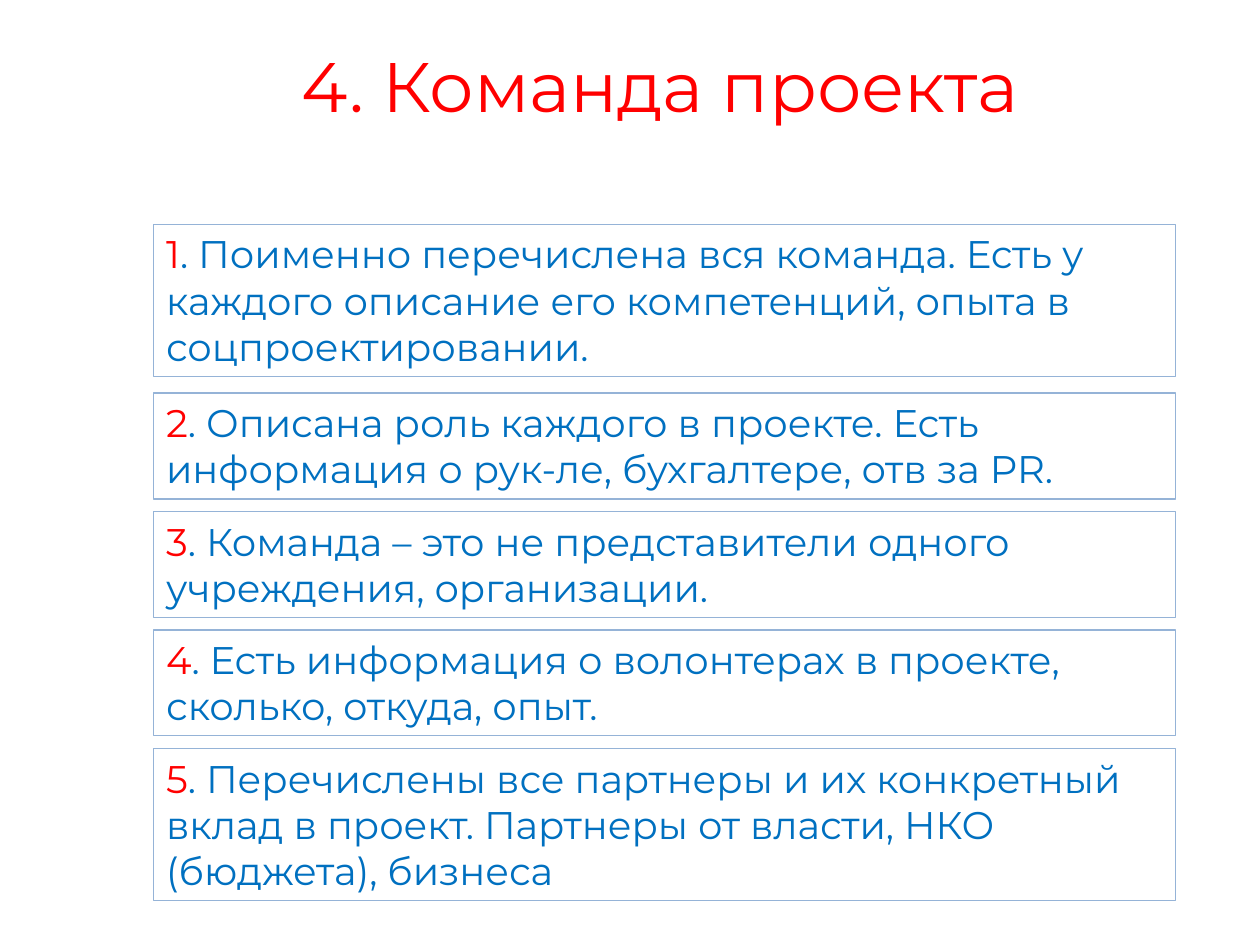
from pptx import Presentation, util as u
from pptx.dml.color import RGBColor
from pptx.enum import shapes, text

COLORS = {"accent": "FF0000", "body": "0070C0", "border": "95B3D7"}
COLUMNS, ROWS = 100, 75

LEFT, WIDTH = 12.2, 81.1
LINE_HEIGHT, PADDING = 3.7, 1
FIRST_TOP, FIRST_GAP, GAP = 17.8, 1.3, 1

# Each criterion with the number of lines it takes
CRITERIA = [
    ("Поименно перечислена вся команда. Есть у каждого описание его "
     "компетенций, опыта в соцпроектировании.", 3),
    ("Описана роль каждого в проекте. Есть информация о рук-ле, "
     "бухгалтере, отв за PR.", 2),
    ("Команда – это не представители одного учреждения, организации.", 2),
    ("Есть информация о волонтерах в проекте, сколько, откуда, опыт.", 2),
    ("Перечислены все партнеры и их конкретный вклад в проект. Партнеры "
     "от власти, НКО (бюджета), бизнеса", 3),
]


def add_span(para, wording, *, size, color, font="Montserrat"):
    span = para.add_run()
    span.text = wording
    span.font.name = font
    span.font.size = u.Pt(size)
    span.font.color.rgb = RGBColor.from_string(COLORS[color])


class Page:
    """Holds the slide, its grid and the text style."""

    def __init__(self, deck):
        self.slide = deck.slides.add_slide(deck.slide_layouts[5])
        self.column = deck.slide_width / COLUMNS
        self.row = deck.slide_height / ROWS

    def place(self, left, top, width, height):
        return (int(left * self.column), int(top * self.row),
                int(width * self.column), int(height * self.row))

    def first_para(self, box, align):
        frame = box.text_frame
        frame.word_wrap = True
        frame.auto_size = text.MSO_AUTO_SIZE.SHAPE_TO_FIT_TEXT
        frame.vertical_anchor = text.MSO_ANCHOR.TOP
        para = frame.paragraphs[0]
        para.alignment = align
        return para

    def title(self, wording, area):
        box = self.slide.shapes.title
        box.left, box.top, box.width, box.height = self.place(*area)
        para = self.first_para(box, text.PP_ALIGN.CENTER)
        add_span(para, wording, size=40, color="accent")

    def criterion(self, number, wording, area):
        box = self.slide.shapes.add_shape(
            shapes.MSO_SHAPE.RECTANGLE, *self.place(*area))
        box.shadow.inherit = False
        box.fill.background()
        box.line.color.rgb = RGBColor.from_string(COLORS["border"])
        box.line.width = u.Pt(0.75)
        para = self.first_para(box, text.PP_ALIGN.LEFT)
        add_span(para, str(number), size=22, color="accent")
        add_span(para, f". {wording}", size=22, color="body")


def main():
    deck = Presentation()
    deck.slide_width, deck.slide_height = u.Inches(10), u.Inches(7.5)
    page = Page(deck)
    page.title("4. Команда проекта", (7.5, 2.9, 89.8, 7.7))

    top = FIRST_TOP
    for number, (wording, lines) in enumerate(CRITERIA, start=1):
        height = lines * LINE_HEIGHT + PADDING
        page.criterion(number, wording, (LEFT, top, WIDTH, height))
        top += height + (FIRST_GAP if number == 1 else GAP)

    deck.save("out.pptx")


if __name__ == "__main__":
    main()
